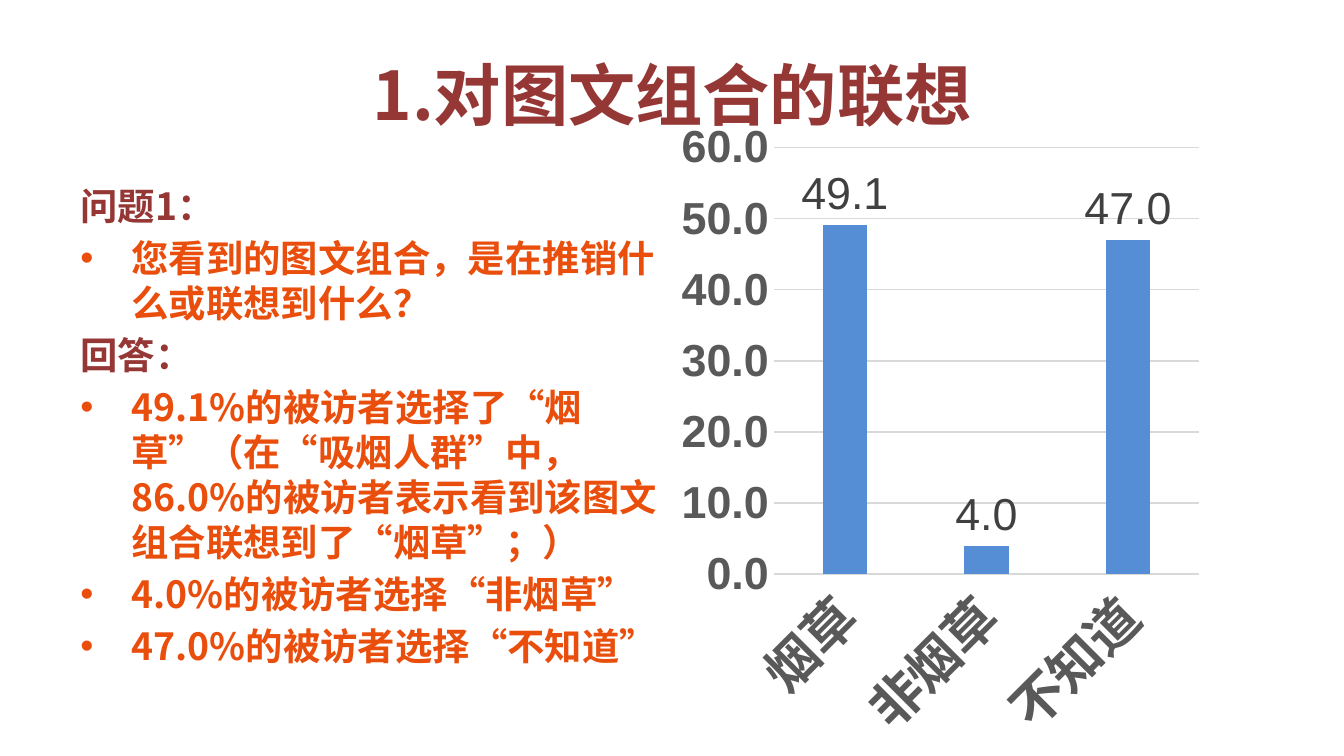
from dataclasses import dataclass

from lxml import etree
from pptx import Presentation
from pptx.chart.data import CategoryChartData
from pptx.dml.color import RGBColor
from pptx.enum.chart import XL_CHART_TYPE, XL_LABEL_POSITION, XL_TICK_MARK
from pptx.enum.text import MSO_ANCHOR, PP_ALIGN
from pptx.oxml import parse_xml
from pptx.oxml.ns import nsdecls, qn
from pptx.util import Emu, Inches, Pt

COLUMN = XL_CHART_TYPE.COLUMN_CLUSTERED
OUTSIDE_END = XL_LABEL_POSITION.OUTSIDE_END
NO_TICK = XL_TICK_MARK.NONE
MIDDLE, TOP = MSO_ANCHOR.MIDDLE, MSO_ANCHOR.TOP
CENTER, LEFT = PP_ALIGN.CENTER, PP_ALIGN.LEFT

WIDTH = Inches(10)
HEIGHT = Emu(WIDTH * 9 // 16)


@dataclass(frozen=True)
class Theme:
    chinese: str = "Noto Sans CJK SC"
    latin: str = "Arial"
    heading: str = "953735"
    detail: str = "E94E0C"
    bar: str = "558ED5"
    axis: str = "595959"
    value: str = "404040"
    grid: str = "D9D9D9"
    title_size: int = 36
    body_size: int = 20
    category_size: int = 28
    number_size: int = 24
    hanging: float = 0.38


THEME = Theme()

TITLE = "1.对图文组合的联想"
DISCUSSION = [
    ("问题1：", ["您看到的图文组合，是在推销什么或联想到什么？"]),
    ("回答：", [
        "49.1%的被访者选择了“烟草”（在“吸烟人群”中，86.0%的被访者表示看到该图文组合联想到了“烟草”；）",
        "4.0%的被访者选择“非烟草”",
        "47.0%的被访者选择“不知道”",
    ]),
]
ANSWERS = {"烟草": 49.1, "非烟草": 4.0, "不知道": 47.0}


def area(left, top, width, height):
    return (Emu(int(WIDTH * left / 100)), Emu(int(HEIGHT * top / 100)),
            Emu(int(WIDTH * width / 100)), Emu(int(HEIGHT * height / 100)))


def style_font(font, size, color, bold):
    font.size = Pt(size)
    font.bold = bold
    font.color.rgb = RGBColor.from_string(color)


def add_run(paragraph, text, size, color):
    run = paragraph.add_run()
    run.text = text
    style_font(run.font, size, color, True)
    run.font.name = THEME.chinese
    east_asian = etree.SubElement(run.font._element, qn("a:ea"))
    east_asian.set("typeface", THEME.chinese)


def add_text_frame(slide, bounds, anchor):
    frame = slide.shapes.add_textbox(*bounds).text_frame
    frame.word_wrap = True
    frame.vertical_anchor = anchor
    return frame


def add_title(slide, bounds):
    paragraph = add_text_frame(slide, bounds, MIDDLE).paragraphs[0]
    paragraph.alignment = CENTER
    add_run(paragraph, TITLE, THEME.title_size, THEME.heading)


def add_bullet(paragraph):
    properties = paragraph._p.get_or_add_pPr()
    properties.set("marL", str(Inches(THEME.hanging)))
    properties.set("indent", str(-Inches(THEME.hanging)))
    bullet_font = etree.SubElement(properties, qn("a:buFont"))
    bullet_font.set("typeface", THEME.latin)
    etree.SubElement(properties, qn("a:buChar")).set("char", "•")


def add_discussion(slide, bounds):
    frame = add_text_frame(slide, bounds, TOP)
    lines = []
    for heading, details in DISCUSSION:
        lines.append((heading, False))
        lines.extend((detail, True) for detail in details)
    for index, (text, bulleted) in enumerate(lines):
        paragraph = frame.add_paragraph() if index else frame.paragraphs[0]
        if bulleted:
            add_bullet(paragraph)
        paragraph.alignment = LEFT
        if index:
            paragraph.space_before = Pt(THEME.body_size * 0.2)
        color = THEME.detail if bulleted else THEME.heading
        add_run(paragraph, text, THEME.body_size, color)


def style_line(line, color):
    line.width = Pt(0.75)
    line.color.rgb = RGBColor.from_string(color)


def style_axis(axis, size):
    axis.major_tick_mark = NO_TICK
    axis.minor_tick_mark = NO_TICK
    font = axis.tick_labels.font
    style_font(font, size, THEME.axis, True)
    font.name = THEME.latin


def set_plot_area(chart, left, top, width, height):
    plot_area = chart._chartSpace.chart.plotArea
    for old in plot_area.findall(qn("c:layout")):
        plot_area.remove(old)
    shares = "".join(f'<c:{tag} val="{value}"/>' for tag, value in
                     (("x", left), ("y", top), ("w", width), ("h", height)))
    plot_area.insert(0, parse_xml(
        f'<c:layout {nsdecls("c")}><c:manualLayout><c:layoutTarget val="inner"/>'
        f'<c:xMode val="edge"/><c:yMode val="edge"/>{shares}'
        '</c:manualLayout></c:layout>'))


def add_answer_chart(slide, bounds):
    data = CategoryChartData(number_format="0.0")
    data.categories = list(ANSWERS)
    data.add_series("Series 1", list(ANSWERS.values()))
    chart = slide.shapes.add_chart(COLUMN, *bounds, data).chart
    chart.has_legend = False
    chart.has_title = False
    chart.font.name = THEME.latin
    set_plot_area(chart, 0.19, 0.06, 0.79, 0.66)

    plot = chart.plots[0]
    plot.vary_by_categories = False
    plot.gap_width, plot.overlap = 219, -27
    fill = plot.series[0].format.fill
    fill.solid()
    fill.fore_color.rgb = RGBColor.from_string(THEME.bar)

    plot.has_data_labels = True
    labels = plot.data_labels
    labels.show_value = True
    labels.position = OUTSIDE_END
    labels.number_format, labels.number_format_is_linked = "###0.0", False
    style_font(labels.font, THEME.number_size, THEME.value, False)
    labels.font.name = THEME.latin

    categories = chart.category_axis
    style_axis(categories, THEME.category_size)
    style_line(categories.format.line, THEME.grid)
    categories._element.find(qn("c:txPr")).find(qn("a:bodyPr")).set("rot", "-2700000")

    scale = chart.value_axis
    style_axis(scale, THEME.number_size)
    scale.minimum_scale, scale.maximum_scale, scale.major_unit = 0, 60, 10
    scale.tick_labels.number_format = "###0.0"
    scale.tick_labels.number_format_is_linked = False
    scale.format.line.fill.background()
    style_line(scale.major_gridlines.format.line, THEME.grid)


def main():
    presentation = Presentation()
    presentation.slide_width, presentation.slide_height = WIDTH, HEIGHT
    slide = presentation.slides.add_slide(presentation.slide_layouts[6])
    add_title(slide, area(5, 4, 90, 16.7))
    add_discussion(slide, area(5, 23.3, 45, 66))
    add_answer_chart(slide, area(50, 14.4, 40, 85.5))
    presentation.save("out.pptx")


if __name__ == "__main__":
    main()
